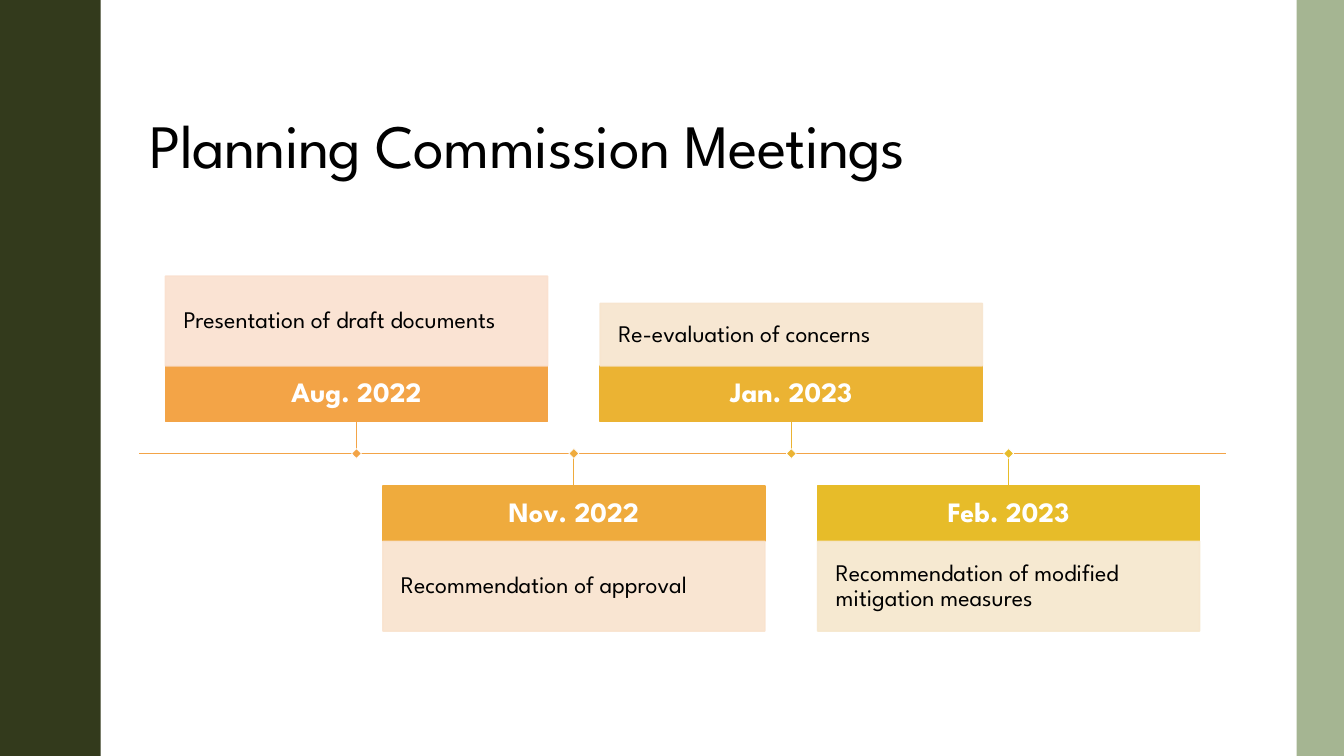
import pptx
import pptx.util
import pptx.dml.color
import pptx.enum.shapes
import pptx.enum.text
import pptx.oxml
import pptx.oxml.ns
import lxml.etree

Inches = pptx.util.Inches
Pt = pptx.util.Pt
Shapes = pptx.enum.shapes.MSO_SHAPE
Align = pptx.enum.text.PP_ALIGN
Anchor = pptx.enum.text.MSO_ANCHOR

COLORS = {
    "forest": "333A1C", "sage": "A5B592", "white": "FFFFFF", "black": "000000",
    "aug": "F3A447", "aug_pale": "FAE0CF",
    "nov": "EFAB3D", "nov_pale": "F9E3CE",
    "jan": "EBB333", "jan_pale": "F7E5CE",
    "feb": "E7BC29", "feb_pale": "F6E7CD",
}
MEETINGS = [
    ("aug", "Aug. 2022", "Presentation of draft documents", 0.89),
    ("nov", "Nov. 2022", "Recommendation of approval", 0.89),
    ("jan", "Jan. 2023", "Re-evaluation of concerns", 0.62),
    ("feb", "Feb. 2023", "Recommendation of modified mitigation measures", 0.89),
]
AXIS_LEFT, AXIS_WIDTH, AXIS_Y = 1.38, 10.78, 4.5
CARD_WIDTH, DATE_HEIGHT, STEM, MARKER = 3.79, 0.55, 0.32, 0.07


class TimelineSlide:
    font = "League Spartan"

    def __init__(self, presentation):
        self.slide = presentation.slides.add_slide(presentation.slide_layouts[5])

    def color(self, name):
        return pptx.dml.color.RGBColor.from_string(COLORS[name])

    def fade(self, fill, percent):
        for rgb in fill.iter(pptx.oxml.ns.qn("a:srgbClr")):
            alpha = lxml.etree.SubElement(rgb, pptx.oxml.ns.qn("a:alpha"))
            alpha.set("val", str(percent * 1000))

    def style_text(self, paragraph, size, color, align, bold=False):
        paragraph.alignment = align
        paragraph.line_spacing = 0.9
        paragraph.font.name = self.font
        paragraph.font.size = Pt(size)
        paragraph.font.bold = bold
        paragraph.font.color.rgb = self.color(color)

    def title(self, text, left, top, width, height):
        heading = self.slide.shapes.title
        heading.left, heading.top = Inches(left), Inches(top)
        heading.width, heading.height = Inches(width), Inches(height)
        frame = heading.text_frame
        frame.text = text
        frame.word_wrap = True
        frame.auto_size = pptx.enum.text.MSO_AUTO_SIZE.NONE
        frame.vertical_anchor = Anchor.BOTTOM
        self.style_text(frame.paragraphs[0], 44, "black", Align.LEFT)
        frame.paragraphs[0].runs[0].font._element.set("spc", "-50")

    def box(self, left, top, width, height, fill, outline=None, weight=1.1):
        rectangle = self.slide.shapes.add_shape(
            Shapes.RECTANGLE, Inches(left), Inches(top), Inches(width), Inches(height))
        rectangle.shadow.inherit = False
        rectangle.fill.solid()
        rectangle.fill.fore_color.rgb = self.color(fill)
        if outline:
            rectangle.line.color.rgb = self.color(outline)
            rectangle.line.width = Pt(weight)
        else:
            rectangle.line.fill.background()
        return rectangle

    def label(self, rectangle, text, inset, size, color, align, bold=False):
        frame = rectangle.text_frame
        frame.text = text
        frame.word_wrap = True
        frame.vertical_anchor = Anchor.MIDDLE
        frame.margin_left = frame.margin_right = Inches(inset)
        frame.margin_top = frame.margin_bottom = Inches(inset)
        self.style_text(frame.paragraphs[0], size, color, align, bold)

    def line(self, start, end, color, weight):
        connector = self.slide.shapes.add_connector(
            pptx.enum.shapes.MSO_CONNECTOR.STRAIGHT,
            *(Inches(value) for value in start + end))
        connector.line.color.rgb = self.color(color)
        connector.line.width = Pt(weight)
        lxml.etree.SubElement(connector._element.spPr, pptx.oxml.ns.qn("a:effectLst"))
        return connector

    def meeting(self, center, above, key, date, topic, topic_height):
        left = center - CARD_WIDTH / 2
        if above:
            date_top = AXIS_Y - STEM - DATE_HEIGHT
            topic_top = date_top - topic_height
            date_edge, side = AXIS_Y - STEM, 2
        else:
            date_top = date_edge = AXIS_Y + STEM
            topic_top = date_top + DATE_HEIGHT
            side = 0
        date_box = self.box(left, date_top, CARD_WIDTH, DATE_HEIGHT, key, key)
        self.label(date_box, date, 0.11, 20, "white", Align.CENTER, True)
        pale = key + "_pale"
        topic_box = self.box(left, topic_top, CARD_WIDTH, topic_height, pale, pale)
        self.fade(topic_box._element.spPr, 90)
        self.label(topic_box, topic, 0.18, 17, "black", Align.LEFT)
        stem = self.line((center, date_edge), (center, AXIS_Y), key, 0.75)
        stem.begin_connect(date_box, side)
        marker = self.box(center - MARKER / 2, AXIS_Y - MARKER / 2,
                          MARKER, MARKER, key, "white", 0.5)
        marker.rotation = 45


def main():
    presentation = pptx.Presentation()
    presentation.slide_width, presentation.slide_height = Inches(13.33), Inches(7.5)
    timeline = TimelineSlide(presentation)
    timeline.title("Planning Commission Meetings", AXIS_LEFT, 0.4, AXIS_WIDTH, 1.45)
    timeline.box(0, 0, 1, 7.5, "forest")
    timeline.box(12.86, 0, 0.47, 7.5, "sage")
    timeline.line((AXIS_LEFT, AXIS_Y), (AXIS_LEFT + AXIS_WIDTH, AXIS_Y), "aug", 1.1)
    step = AXIS_WIDTH / (len(MEETINGS) + 1)
    for index, details in enumerate(MEETINGS):
        timeline.meeting(AXIS_LEFT + step * (index + 1), index % 2 == 0, *details)
    presentation.save("out.pptx")


if __name__ == "__main__":
    main()
